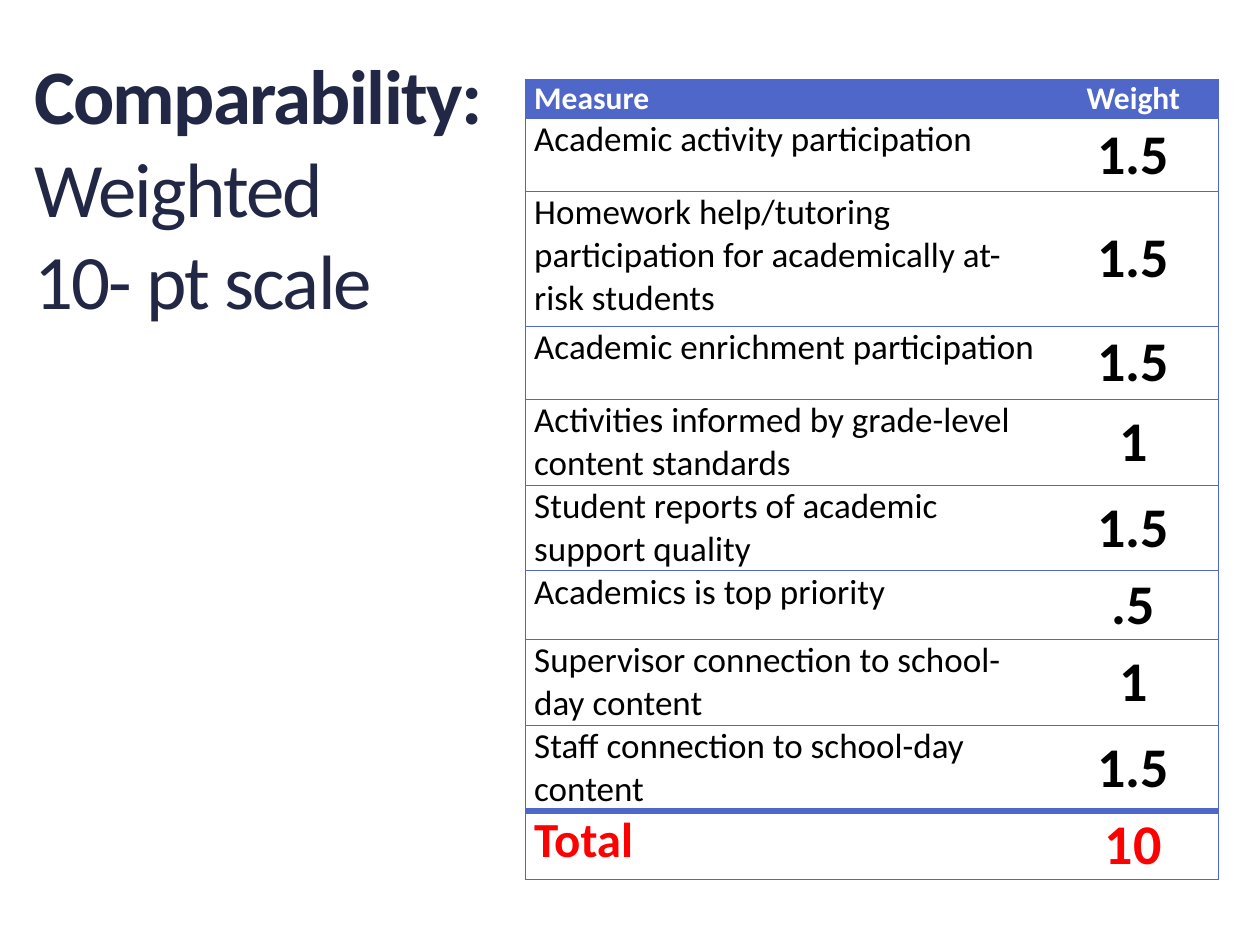
from dataclasses import dataclass

from lxml.etree import SubElement
from pptx import Presentation
from pptx.dml.color import RGBColor
from pptx.enum.text import MSO_ANCHOR, MSO_AUTO_SIZE, PP_ALIGN
from pptx.oxml.ns import qn
from pptx.util import Inches, Pt


@dataclass(frozen=True)
class Theme:
    """Hold the colours, font and type sizes of the slide."""

    font: str = "Calibri"
    title: str = "212745"
    accent: str = "4E67C8"
    paper: str = "FFFFFF"
    ink: str = "000000"
    total: str = "FF0000"
    title_size: int = 44
    header_size: int = 18
    measure_size: int = 20
    weight_size: int = 32
    total_size: int = 28
    thin: float = 0.75
    thick: float = 4


MEASURES = [
    ("Academic activity participation", "1.5", 0.58),
    ("Homework help/tutoring participation for academically at-risk students", "1.5", 1.07),
    ("Academic enrichment participation", "1.5", 0.58),
    ("Activities informed by grade-level content standards", "1", 0.68),
    ("Student reports of academic support quality", "1.5", 0.68),
    ("Academics is top priority", ".5", 0.54),
    ("Supervisor connection to school-day content", "1", 0.68),
    ("Staff connection to school-day content", "1.5", 0.68),
]
ROWS = [("Measure", "Weight", 0.31), *MEASURES, ("Total", "10", 0.54)]


class SlideBuilder:
    """Draw styled elements on the current slide."""

    def __init__(self, slide, theme):
        """Keep the slide and its theme."""
        self.slide = slide
        self.theme = theme

    def style(self, span, size, color, bold):
        """Format one run of text."""
        span.font.name = self.theme.font
        span.font.size = Pt(size)
        span.font.bold = bold
        span.font.color.rgb = RGBColor.from_string(color)

    def title(self, heading, lines, left, top, width, height):
        """Place a bold heading followed by plain lines in the title."""
        box = self.slide.shapes.title
        box.left, box.top, box.width, box.height = left, top, width, height
        frame = box.text_frame
        frame.word_wrap = True
        frame.auto_size = MSO_AUTO_SIZE.NONE
        frame.vertical_anchor = MSO_ANCHOR.TOP
        para = frame.paragraphs[0]
        para.alignment = PP_ALIGN.LEFT
        para.text = heading + "\v".join(lines[:1])
        para.text = heading
        for index, line in enumerate(lines):
            if index:
                para.add_line_break()
            para.add_run().text = line
        for index, span in enumerate(para.runs):
            self.style(span, self.theme.title_size, self.theme.title, index == 0)
            span.font._element.set("spc", "-100")

    def borders(self, cell, widths):
        """Set the cell's four edges, hiding those without a width."""
        properties = cell._tc.get_or_add_tcPr()
        for side in "LRTB":
            width = widths.get(side, 0)
            line = SubElement(properties, qn(f"a:ln{side}"), w=str(Pt(width)))
            if width:
                fill = SubElement(line, qn("a:solidFill"))
                SubElement(fill, qn("a:srgbClr"), val=self.theme.accent)
            else:
                SubElement(line, qn("a:noFill"))

    def cell(self, cell, text, size, color, bold, fill, centred):
        """Fill one table cell with formatted text."""
        cell.fill.solid()
        cell.fill.fore_color.rgb = RGBColor.from_string(fill)
        cell.margin_left = cell.margin_right = Inches(0.07)
        cell.margin_top = cell.margin_bottom = 0
        cell.vertical_anchor = MSO_ANCHOR.MIDDLE if centred else MSO_ANCHOR.TOP
        para = cell.text_frame.paragraphs[0]
        para.text = text
        para.alignment = PP_ALIGN.CENTER if centred else PP_ALIGN.LEFT
        para.space_before = para.space_after = Pt(2.4)
        self.style(para.runs[0], size, color, bold)

    def table(self, rows, columns, left, top):
        """Draw the weights table with a header and a total row."""
        theme = self.theme
        last = len(rows) - 1
        height = Inches(sum(row[-1] for row in rows))
        table = self.slide.shapes.add_table(
            len(rows), len(columns), left, top, sum(columns), height
        ).table
        for column, width in zip(table.columns, columns):
            column.width = width
        for index, (*texts, row_height) in enumerate(rows):
            table.rows[index].height = Inches(row_height)
            color, fill = theme.ink, theme.paper
            sizes = (theme.measure_size, theme.weight_size)
            if index == 0:
                color, fill = theme.paper, theme.accent
                sizes = (theme.header_size, theme.header_size)
            elif index == last:
                color = theme.total
                sizes = (theme.total_size, theme.weight_size)
            for place, text in enumerate(texts):
                cell = table.cell(index, place)
                self.borders(cell, {
                    "LR"[place]: theme.thin,
                    "T": theme.thick if index == last else theme.thin,
                    "B": theme.thick if index == last - 1 else theme.thin,
                })
                bold = place == 1 or index in (0, last)
                self.cell(cell, text, sizes[place], color, bold, fill, place == 1)


def main():
    """Build and save the slide."""
    deck = Presentation()
    deck.slide_width, deck.slide_height = Inches(10), Inches(7.5)
    page = SlideBuilder(deck.slides.add_slide(deck.slide_layouts[5]), Theme())
    page.title("Comparability: ", ["Weighted ", "10- pt scale"],
               Inches(0.17), Inches(0.33), Inches(3.75), Inches(5))
    page.table(ROWS, [Inches(4.15), Inches(1.35)], Inches(4.17), Inches(0.63))
    deck.save("out.pptx")


if __name__ == "__main__":
    main()
